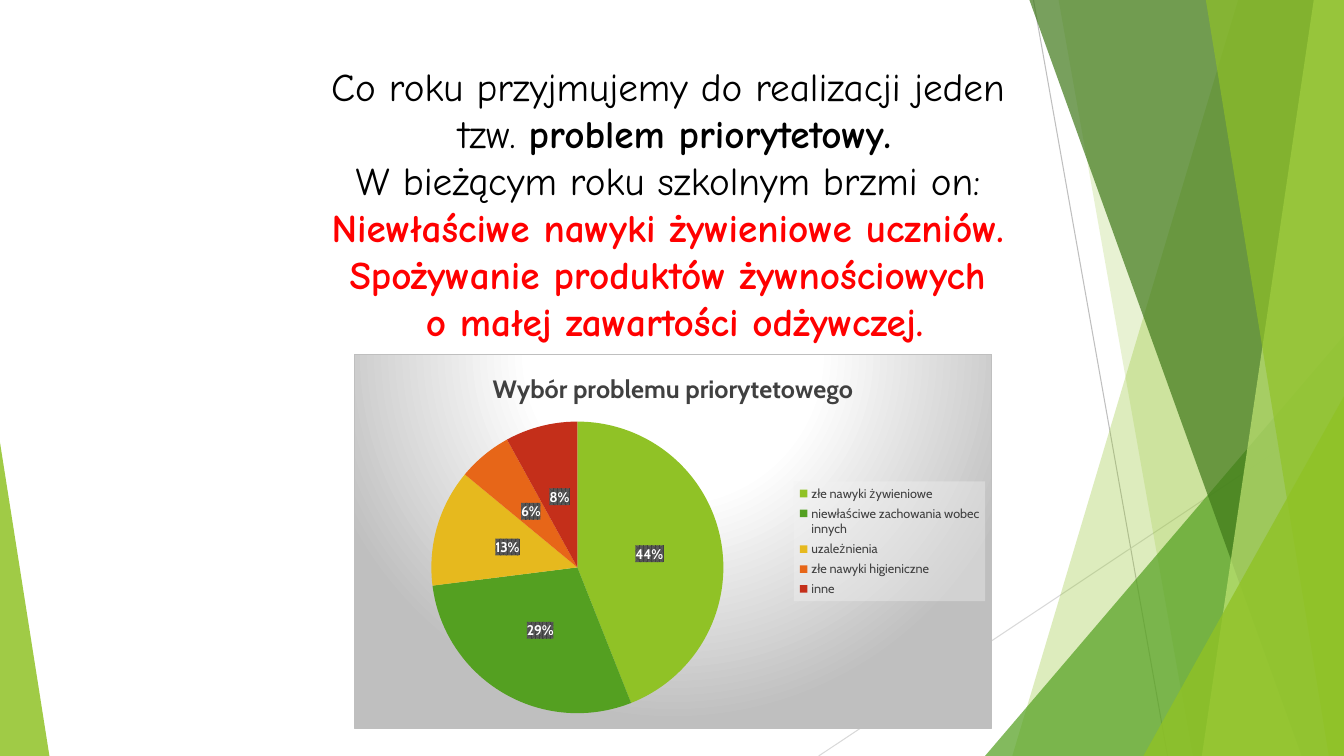
from lxml.etree import SubElement
from pptx import Presentation
from pptx.chart.data import CategoryChartData
from pptx.dml.color import RGBColor
from pptx.enum.chart import XL_CHART_TYPE, XL_LABEL_POSITION, XL_LEGEND_POSITION
from pptx.enum.shapes import MSO_CONNECTOR, MSO_SHAPE
from pptx.enum.text import PP_ALIGN
from pptx.oxml import parse_xml
from pptx.oxml.ns import nsdecls, qn
from pptx.util import Inches, Pt

WIDTH, HEIGHT = 13.33, 7.5
LIME, GREEN, GREY, DARK = "90C226", "54A021", "BFBFBF", "404040"
RED, BLACK = "FF0000", "000000"
HEADING_FONT, CHART_FONT = "Comic Neue", "Cabin"

FACETS = [
    ("band", 1.05, 3.29, LIME, 30),
    ("band", 2.83, 1.5, LIME, 20),
    ("triangle", 3.56, 4.17, GREEN, 72),
    ("band", 3.12, 0.42, "3F7819", 70),
    ("band", 0.3, 1.41, "C0E474", 70),
    ("band", 1.37, 0.15, LIME, 65),
    ("triangle", 1.99, 3.57, LIME, 80),
]
HEADING = [
    [("Co roku przyjmujemy do realizacji jeden ", BLACK, False)],
    [("tzw. ", BLACK, False), ("problem priorytetowy.", BLACK, True)],
    [("W bieżącym roku szkolnym brzmi on: ", BLACK, False)],
    [("Niewłaściwe nawyki żywieniowe uczniów. ", RED, True)],
    [("Spożywanie produktów żywnościowych ", RED, True)],
    [("o małej zawartości odżywczej.", RED, True)],
]
PROBLEMS = [
    ("złe nawyki żywieniowe", 44, LIME),
    ("niewłaściwe zachowania wobec innych", 29, GREEN),
    ("uzależnienia", 13, "E6B91E"),
    ("złe nawyki higieniczne", 6, "E76618"),
    ("inne", 8, "C42F1A"),
]


def color(value):
    return RGBColor.from_string(value)


def format_font(font, name=CHART_FONT, size=10, fill=BLACK, bold=False):
    font.name, font.size, font.bold = name, Pt(size), bold
    font.color.rgb = color(fill)


def add_span(para, text, **style):
    span = para.add_run()
    span.text = text
    format_font(span.font, **style)


def paint(shape, fill, opacity):
    shape.shadow.inherit = False
    shape.fill.solid()
    shape.fill.fore_color.rgb = color(fill)
    shape.line.fill.background()
    tint = shape.fill._xPr.find(qn("a:solidFill"))[0]
    SubElement(tint, qn("a:alpha"), val=str(opacity * 1000))


def add_line(page, start, end, fill):
    line = page.shapes.add_connector(
        MSO_CONNECTOR.STRAIGHT, *[Inches(value) for value in start + end])
    line.line.color.rgb = color(fill)
    line.line.width = Pt(0.75)
    SubElement(line._element.spPr, qn("a:effectLst"))


def add_band(page, right, bottom, top_reach, bottom_reach):
    builder = page.shapes.build_freeform(Inches(right - top_reach), 0, 1.0)
    corners = [(right, 0), (right, bottom), (right - bottom_reach, bottom)]
    builder.add_line_segments([(Inches(x), Inches(y)) for x, y in corners])
    return builder.convert_to_shape()


def add_triangle(page, left, bottom, width, height, apex):
    triangle = page.shapes.add_shape(
        MSO_SHAPE.ISOSCELES_TRIANGLE, Inches(left), Inches(bottom - height),
        Inches(width), Inches(height))
    triangle.adjustments[0] = apex
    return triangle


def add_facets(page, width, height):
    add_line(page, (10.25, 0), (11.58, height), GREY)
    add_line(page, (width, 4.03), (8.12, height), "D9D9D9")
    for kind, first, second, fill, opacity in FACETS:
        if kind == "band":
            facet = add_band(page, width, height, first, second)
        else:
            facet = add_triangle(page, width - first, height, first, second, 1)
        paint(facet, fill, opacity)
    paint(add_triangle(page, 0, height, 0.49, 3.11, 0), LIME, 85)


def add_heading(page, left, top, width, height):
    box = page.shapes.add_textbox(*map(Inches, (left, top, width, height)))
    frame = box.text_frame
    frame.word_wrap = True
    for index, spans in enumerate(HEADING):
        para = frame.add_paragraph() if index else frame.paragraphs[0]
        para.alignment = PP_ALIGN.CENTER
        for text, fill, bold in spans:
            add_span(para, text, name=HEADING_FONT, size=28, fill=fill, bold=bold)


def manual_layout(x, y, width, height, inner=False):
    target = '<c:layoutTarget val="inner"/>' if inner else ""
    return parse_xml(
        f'<c:layout {nsdecls("c")}><c:manualLayout>{target}'
        '<c:xMode val="edge"/><c:yMode val="edge"/>'
        f'<c:x val="{x}"/><c:y val="{y}"/><c:w val="{width}"/><c:h val="{height}"/>'
        '</c:manualLayout></c:layout>')


def shape_properties(content):
    return parse_xml(f'<c:spPr {nsdecls("c", "a")}>{content}</c:spPr>')


def add_background(chart):
    stops = "".join(
        f'<a:gs pos="{place * 1000}"><a:srgbClr val="{fill}"/></a:gs>'
        for place, fill in [(0, "FFFFFF"), (39, "FFFFFF"), (100, GREY)])
    properties = shape_properties(
        f'<a:gradFill><a:gsLst>{stops}</a:gsLst><a:path path="circle">'
        '<a:fillToRect l="50000" t="-80000" r="50000" b="180000"/></a:path></a:gradFill>'
        f'<a:ln w="9525"><a:solidFill><a:srgbClr val="{GREY}"/></a:solidFill></a:ln>')
    chart._chartSpace.chart.addnext(properties)


def add_legend(chart):
    chart.has_legend = True
    legend = chart.legend
    legend.position = XL_LEGEND_POSITION.RIGHT
    legend.include_in_layout = False
    format_font(legend.font, size=9, fill=DARK)
    element = legend._element
    for old in element.findall(qn("c:layout")):
        element.remove(old)
    element.find(qn("c:legendPos")).addnext(manual_layout(0.69, 0.34, 0.3, 0.32))
    element.find(qn("c:txPr")).addprevious(shape_properties(
        '<a:solidFill><a:srgbClr val="F2F2F2"><a:alpha val="39000"/></a:srgbClr></a:solidFill>'))


def add_labels(plot):
    plot.has_data_labels = True
    labels = plot.data_labels
    labels.show_percentage, labels.show_value = True, False
    labels.number_format, labels.number_format_is_linked = "0%", False
    labels.position = XL_LABEL_POSITION.CENTER
    format_font(labels.font, fill="FFFFFF", bold=True)
    labels._element.find(qn("c:txPr")).addprevious(shape_properties(
        f'<a:pattFill prst="pct75"><a:fgClr><a:srgbClr val="{DARK}"/></a:fgClr>'
        '<a:bgClr><a:srgbClr val="595959"/></a:bgClr></a:pattFill>'))


def add_pie(page, left, top, width, height):
    names, values, fills = zip(*PROBLEMS)
    data = CategoryChartData()
    data.categories = names
    data.add_series("Series 1", values)
    chart = page.shapes.add_chart(
        XL_CHART_TYPE.PIE, *map(Inches, (left, top, width, height)), data).chart
    format_font(chart.font)
    chart.has_title = True
    add_span(chart.chart_title.text_frame.paragraphs[0],
             "Wybór problemu priorytetowego", size=18, fill=DARK, bold=True)
    plot = chart.plots[0]
    plot.vary_by_categories = True
    for index, fill in enumerate(fills):
        slice_fill = plot.series[0].points[index].format.fill
        slice_fill.solid()
        slice_fill.fore_color.rgb = color(fill)
    add_labels(plot)
    add_legend(chart)
    add_background(chart)
    area = chart._chartSpace.chart.plotArea
    for old in area.findall(qn("c:layout")):
        area.remove(old)
    area.insert(0, manual_layout(0.12, 0.18, 0.46, 0.78, inner=True))


def main():
    deck = Presentation()
    deck.slide_width, deck.slide_height = Inches(WIDTH), Inches(HEIGHT)
    page = deck.slides.add_slide(deck.slide_layouts[6])
    add_facets(page, WIDTH, HEIGHT)
    add_heading(page, 0.67, 0.57, 12.04, 3.87)
    add_pie(page, 3.51, 3.51, 6.33, 3.72)
    deck.save("out.pptx")


if __name__ == "__main__":
    main()
